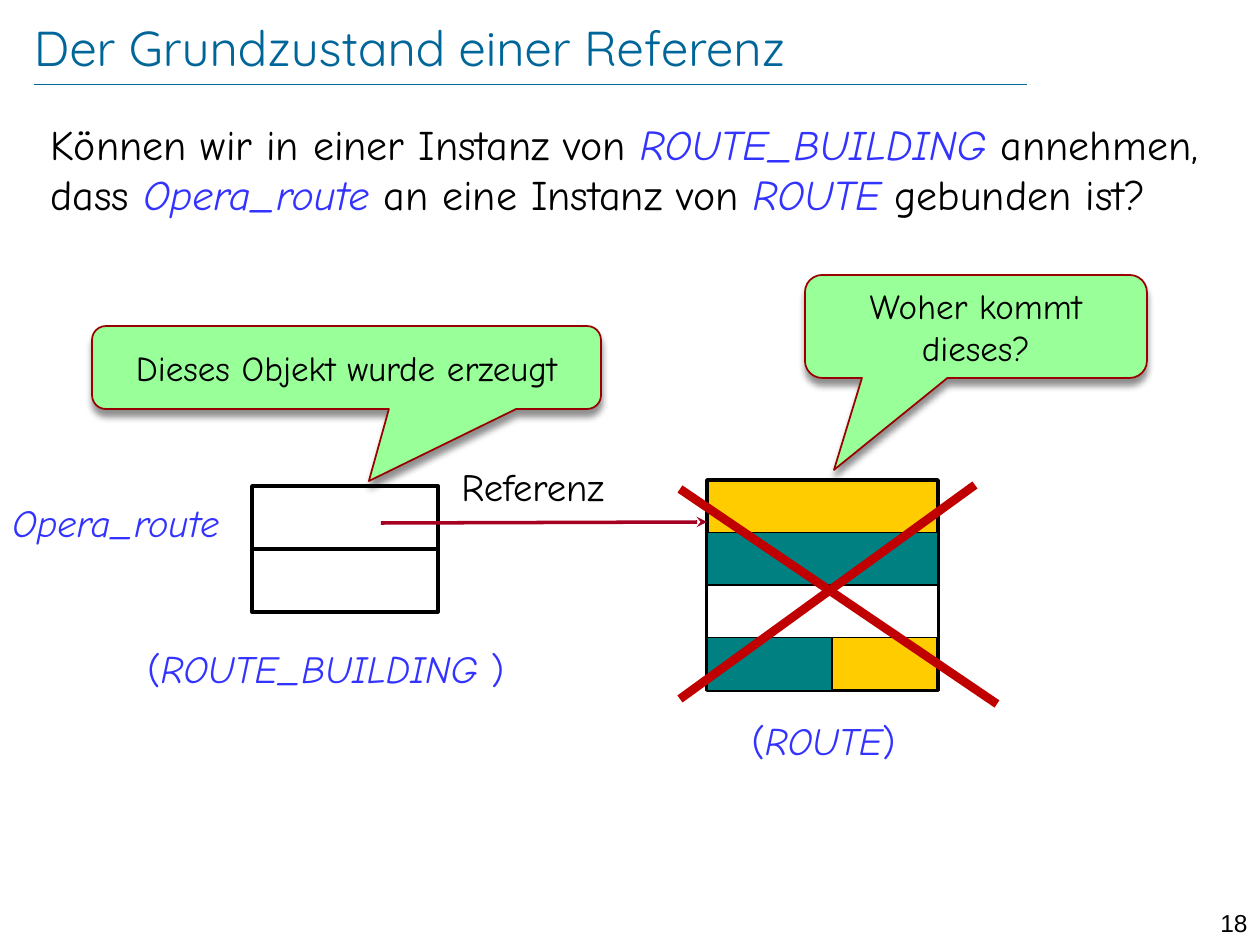
from lxml import etree
from pptx import Presentation
from pptx.dml.color import RGBColor
from pptx.enum.shapes import MSO_CONNECTOR, MSO_SHAPE
from pptx.enum.text import MSO_ANCHOR, PP_ALIGN
from pptx.oxml import parse_xml
from pptx.oxml.ns import nsdecls, qn
from pptx.util import Emu, Pt

PX = 914400 / 126
LEFT, CENTER, RIGHT = PP_ALIGN.LEFT, PP_ALIGN.CENTER, PP_ALIGN.RIGHT
MIDDLE = MSO_ANCHOR.MIDDLE
RECT = MSO_SHAPE.RECTANGLE
CALLOUT = MSO_SHAPE.ROUNDED_RECTANGULAR_CALLOUT
STRAIGHT = MSO_CONNECTOR.STRAIGHT
FONT = "Comic Neue"
COLORS = {
    "title": "006699", "text": "000000", "code": "3333FF",
    "yellow": "FFCC00", "teal": "008080", "white": "FFFFFF",
    "bubble": "99FF99", "bubble_line": "990000",
    "arrow": "A50021", "cross": "C00000",
}


def px(*values):
    return [Emu(round(v * PX)) for v in values]


def rgb(name):
    return RGBColor.from_string(COLORS[name])


def write(tf, runs, size, align=LEFT, font=FONT):
    tf.word_wrap = True
    p = tf.paragraphs[0]
    p.alignment = align
    for text, color, italic in runs:
        r = p.add_run()
        r.text = text
        r.font.size = Pt(size)
        r.font.name = font
        r.font.italic = italic
        r.font.color.rgb = rgb(color)


def set_insets(tf, vertical=0):
    tf.margin_left = tf.margin_right = 0
    tf.margin_top, tf.margin_bottom = px(vertical, vertical)


def add_title(s, text, box):
    sp = s.shapes.title
    sp.left, sp.top, sp.width, sp.height = px(*box)
    tf = sp.text_frame
    set_insets(tf)
    tf.vertical_anchor = MIDDLE
    write(tf, [(text, "title", False)], 28, font="Quicksand")


def add_text(s, box, runs, size=22, align=LEFT, font=FONT):
    sp = s.shapes.add_textbox(*px(*box))
    write(sp.text_frame, runs, size, align, font)


def add_box(s, box, fill=None, line="text", width=2, kind=RECT):
    sp = s.shapes.add_shape(kind, *px(*box))
    sp.shadow.inherit = False
    if fill:
        sp.fill.solid()
        sp.fill.fore_color.rgb = rgb(fill)
    else:
        sp.fill.background()
    sp.line.color.rgb = rgb(line)
    sp.line.width = Pt(width)
    return sp


def add_callout(s, box, tip, text):
    sp = add_box(s, box, "bubble", "bubble_line", 1, CALLOUT)
    for i, value in enumerate((*tip, 0.167)):
        sp.adjustments[i] = value
    effects = sp._element.spPr.find(qn("a:effectLst"))
    effects.append(parse_xml(
        f'<a:outerShdw {nsdecls("a")} blurRad="50800" dist="50800" dir="5400000">'
        '<a:srgbClr val="000000"><a:alpha val="43000"/></a:srgbClr></a:outerShdw>'))
    tf = sp.text_frame
    set_insets(tf, 6)
    tf.vertical_anchor = MIDDLE
    write(tf, [(text, "text", False)], 20, CENTER)


def add_line(s, start, end, color, width, arrow=False):
    c = s.shapes.add_connector(STRAIGHT, *px(*start, *end))
    c.line.color.rgb = rgb(color)
    c.line.width = Pt(width)
    if arrow:
        etree.SubElement(c.line._get_or_add_ln(), qn("a:tailEnd"), type="stealth")
    etree.SubElement(c._element.spPr, qn("a:effectLst"))


def add_route_object(s, left, top, width, band):
    add_box(s, (left, top, width, 4 * band), "yellow")
    bands = [(1, width, "teal"), (2, width, "white"), (3, 125, "teal")]
    for row, w, fill in bands:
        add_box(s, (left, top + row * band, w, band), fill, width=0.75)


def main():
    prs = Presentation()
    prs.slide_width, prs.slide_height = px(1260, 945)
    s = prs.slides.add_slide(prs.slide_layouts[5])

    add_title(s, "Der Grundzustand einer Referenz", (34, 17, 1095, 60))
    add_line(s, (34, 84), (1027, 84), "title", 0.25)
    add_text(s, (38, 112, 1174, 156), [
        ("Können wir in einer Instanz von ", "text", False),
        ("ROUTE_BUILDING ", "code", True),
        ("annehmen, dass ", "text", False),
        ("Opera_route ", "code", True),
        ("an eine Instanz von ", "text", False),
        ("ROUTE ", "code", True),
        ("gebunden ist?", "text", False),
    ], 24)

    add_route_object(s, 707, 480, 231, 52.6)
    for row in range(2):
        add_box(s, (252, 486 + 63 * row, 186, 63))
    add_line(s, (381, 523), (707, 522), "arrow", 2, arrow=True)

    add_text(s, (0, 493, 258, 59), [("Opera_route", "code", True)])
    add_text(s, (449, 457, 234, 59), [("Referenz", "text", False)])
    add_text(s, (135, 639, 425, 59), [
        ("(", "code", False), ("ROUTE_BUILDING ", "code", True), (")", "code", False)])
    add_text(s, (707, 711, 233, 59), [
        ("(", "code", False), ("ROUTE", "code", True), (")", "code", False)], align=CENTER)

    add_callout(s, (805, 275, 342, 103), (-0.415, 1.393), "Woher kommt dieses?")
    add_callout(s, (92, 326, 509, 83), (0.044, 1.368), "Dieses Objekt wurde erzeugt")
    add_line(s, (680, 489), (997, 704), "cross", 5)
    add_line(s, (680, 699), (975, 485), "cross", 5)
    add_text(s, (1191, 902, 69, 30), [("18", "text", False)], 14, RIGHT, "Arial")

    prs.save("out.pptx")


if __name__ == "__main__":
    main()
